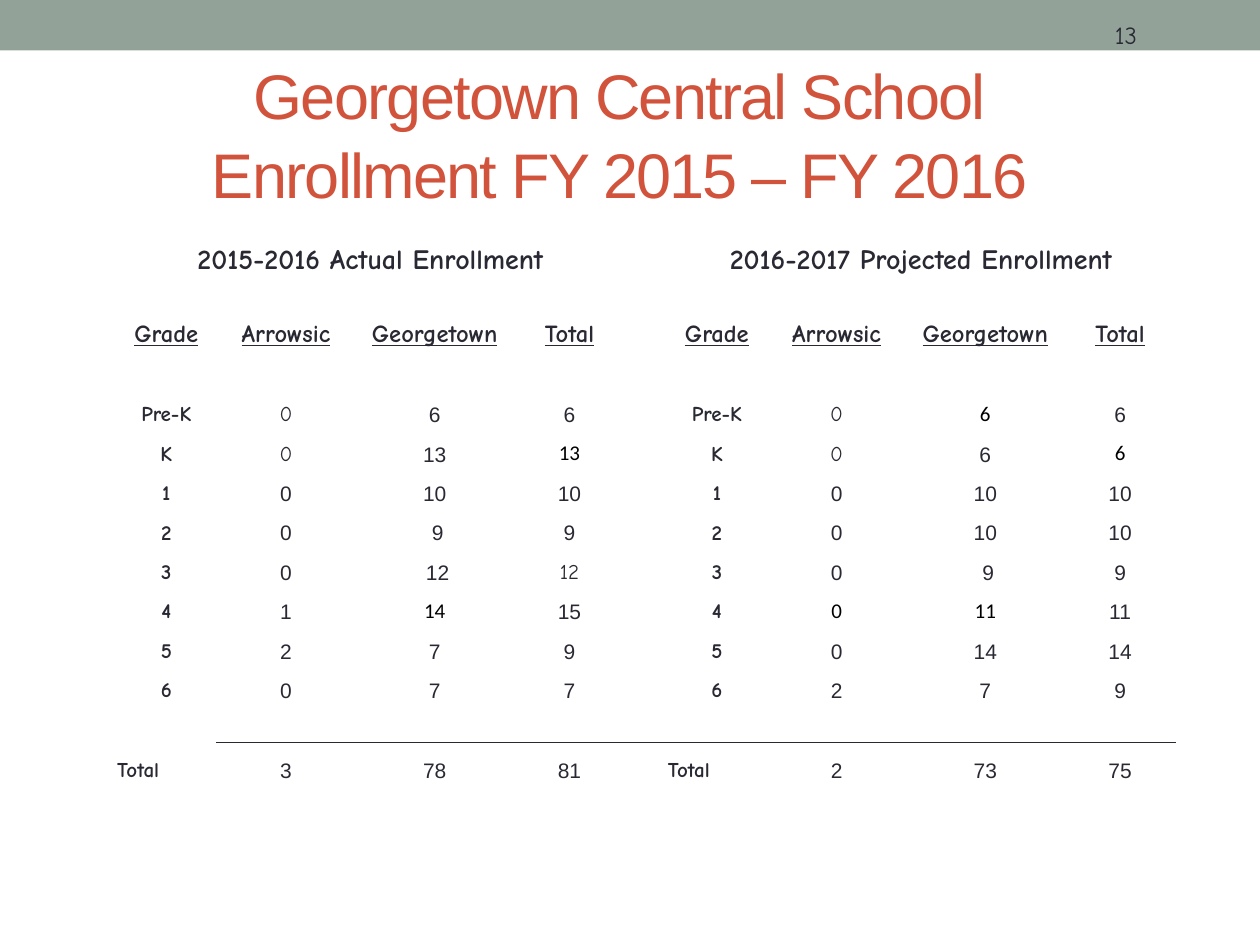
from dataclasses import dataclass

from lxml import etree
from pptx import Presentation
from pptx.dml.color import RGBColor
from pptx.enum import shapes, text
from pptx.oxml import ns
from pptx.util import Pt

COLORS = {
    "band": "93A299",
    "title": "D2533C",
    "ink": "292934",
    "black": "000000",
    "white": "FFFFFF",
}


@dataclass(frozen=True)
class Style:
    font: str
    size: float
    color: str = "ink"
    bold: bool = False
    underline: bool = False
    align: text.PP_ALIGN = text.PP_ALIGN.CENTER


@dataclass(frozen=True)
class Year:
    heading: str
    first_column: int
    enrollment: list[tuple[str, str, str]]
    totals: tuple[str, str, str]


TITLE = Style("Arial", 36, "title")
PAGE_NUMBER = Style("Comic Neue", 14, align=text.PP_ALIGN.LEFT)
HEADING = Style("Comic Neue", 16, bold=True)
COLUMN_HEAD = Style("Comic Neue", 14, bold=True, underline=True)
GRADE = Style("Comic Neue", 12, bold=True)
TOTAL = Style("Comic Neue", 12, bold=True, align=text.PP_ALIGN.LEFT)
COUNT = Style("Arial", 12)
HANDWRITTEN = Style("Comic Neue", 12)
REVISED = Style("Calibri", 12, "black")

COLUMN_NAMES = ["Grade", "Arrowsic", "Georgetown", "Total"]
GRADES = ["Pre-K", "K", "1", "2", "3", "4", "5", "6"]
YEARS = [
    Year(
        "2015-2016 Actual Enrollment",
        0,
        [("0", "6", "6"), ("0", "13", "13"), ("0", "10", "10"), ("0", " 9", "9"),
         ("0", " 12", "12"), ("1", "14", "15"), ("2", "7", "9"), ("0", "7", "7")],
        ("3", "78", "81"),
    ),
    Year(
        "2016-2017 Projected Enrollment",
        5,
        [("0", "6", "6"), ("0", "6", "6"), ("0", "10", "10"), ("0", "10", "10"),
         ("0", " 9", "9"), ("0", "11", "11"), ("0", "14", "14"), ("2", "7", "9")],
        ("2", "73", "75"),
    ),
]

HEADING_ROW, NAMES_ROW, FIRST_GRADE_ROW, RULE_ROW, TOTAL_ROW = 1, 3, 5, 13, 14
SPECIAL_COUNTS = {
    **dict.fromkeys([(5, 1), (6, 1), (5, 6), (6, 6), (9, 3)], HANDWRITTEN),
    **dict.fromkeys([(6, 3), (10, 2), (5, 7), (6, 8), (10, 6), (10, 7)], REVISED),
}
YEAR_WIDTHS = [57.6, 79.2, 90.72, 63.36]
COLUMN_WIDTHS = YEAR_WIDTHS + [23.76] + YEAR_WIDTHS
ROW_HEIGHTS = [21.6, 22.53, 18.72] + [22.53] * 11 + [23.04] * 2


def rgb(name: str) -> RGBColor:
    return RGBColor.from_string(COLORS[name])


def style_paragraph(paragraph, style: Style) -> None:
    paragraph.alignment = style.align
    font = paragraph.font
    font.name = style.font
    font.size = Pt(style.size)
    font.bold = style.bold
    font.underline = style.underline
    font.color.rgb = rgb(style.color)


def add_text(slide, words: str, style: Style, left: float, top: float,
             width: float, height: float, wrap: bool):
    frame = slide.shapes.add_textbox(Pt(left), Pt(top), Pt(width), Pt(height)).text_frame
    frame.word_wrap = wrap
    paragraph = frame.paragraphs[0]
    paragraph.text = words
    style_paragraph(paragraph, style)
    return frame


def add_band(slide) -> None:
    band = slide.shapes.add_shape(shapes.MSO_SHAPE.RECTANGLE, 0, 0, Pt(720), Pt(28.8))
    band.shadow.inherit = False
    band.fill.solid()
    band.fill.fore_color.rgb = rgb("band")
    band.line.fill.background()


def add_border(cell_properties, side: str, color: str) -> None:
    border = etree.SubElement(cell_properties, ns.qn(f"a:{side}"), w=str(Pt(1)))
    fill = etree.SubElement(border, ns.qn("a:solidFill"))
    etree.SubElement(fill, ns.qn("a:srgbClr"), val=COLORS[color])


def prepare_cell(cell, row: int, column: int) -> None:
    cell.margin_left = cell.margin_right = cell.margin_top = Pt(0.72)
    cell.margin_bottom = 0
    cell.vertical_anchor = text.MSO_ANCHOR.BOTTOM
    ruled_side = {RULE_ROW: "lnB", TOTAL_ROW: "lnT"}.get(row) if column else None
    for side in ("lnL", "lnR", "lnT", "lnB"):
        add_border(cell._tc.get_or_add_tcPr(), side, "ink" if side == ruled_side else "white")
    cell.fill.background()
    paragraph = cell.text_frame.paragraphs[0]
    style_paragraph(paragraph, COUNT)
    paragraph._p.get_or_add_endParaRPr().set("sz", "1200")


def write_cell(table, row: int, column: int, words: str, style: Style) -> None:
    paragraph = table.cell(row, column).text_frame.paragraphs[0]
    paragraph.text = words
    style_paragraph(paragraph, style)


def write_year(table, year: Year) -> None:
    first = year.first_column
    table.cell(HEADING_ROW, first).merge(table.cell(HEADING_ROW, first + 3))
    write_cell(table, HEADING_ROW, first, year.heading, HEADING)
    for column, name in enumerate(COLUMN_NAMES, first):
        write_cell(table, NAMES_ROW, column, name, COLUMN_HEAD)
    for row, (grade, counts) in enumerate(zip(GRADES, year.enrollment), FIRST_GRADE_ROW):
        write_cell(table, row, first, grade, GRADE)
        for column, count in enumerate(counts, first + 1):
            write_cell(table, row, column, count, SPECIAL_COUNTS.get((row, column), COUNT))
    write_cell(table, TOTAL_ROW, first, "Total", TOTAL)
    for column, count in enumerate(year.totals, first + 1):
        write_cell(table, TOTAL_ROW, column, count, COUNT)


def add_enrollment(slide) -> None:
    table = slide.shapes.add_table(
        len(ROW_HEIGHTS), len(COLUMN_WIDTHS), Pt(66.24), Pt(113.76),
        Pt(sum(COLUMN_WIDTHS)), Pt(sum(ROW_HEIGHTS)),
    ).table
    table.first_row = table.horz_banding = False
    for column, width in zip(table.columns, COLUMN_WIDTHS):
        column.width = Pt(width)
    for row, height in enumerate(ROW_HEIGHTS):
        table.rows[row].height = Pt(height)
        for column in range(len(COLUMN_WIDTHS)):
            prepare_cell(table.cell(row, column), row, column)
    for year in YEARS:
        write_year(table, year)


def main() -> None:
    deck = Presentation()
    deck.slide_width, deck.slide_height = Pt(720), Pt(540)
    slide = deck.slides.add_slide(deck.slide_layouts[6])
    add_band(slide)
    add_enrollment(slide)
    title = add_text(slide, "Georgetown Central School\vEnrollment FY 2015 – FY 2016",
                     TITLE, 30.24, 30.24, 648, 90, True)
    title.vertical_anchor = text.MSO_ANCHOR.MIDDLE
    title.paragraphs[0].line_spacing = 1.05
    title.paragraphs[0].font._element.set("spc", "-100")
    add_text(slide, "13", PAGE_NUMBER, 630, 7.92, 27.36, 24.48, False)
    deck.save("out.pptx")


if __name__ == "__main__":
    main()
